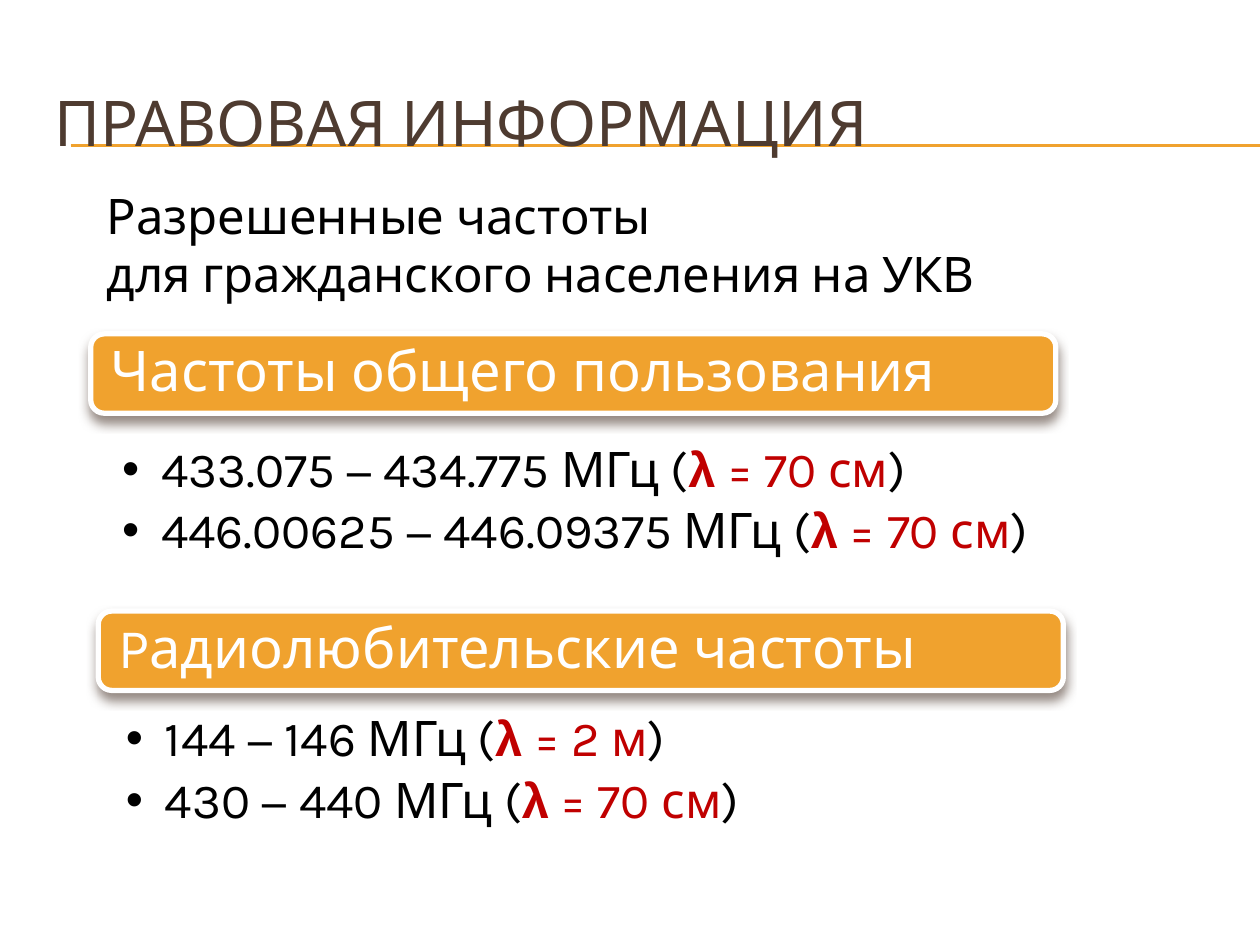
from lxml import etree
from pptx import Presentation
from pptx.dml.color import RGBColor
from pptx.enum.shapes import MSO_CONNECTOR, MSO_SHAPE
from pptx.enum.text import MSO_ANCHOR, MSO_AUTO_SIZE, PP_ALIGN
from pptx.oxml import parse_xml
from pptx.oxml.ns import nsdecls, qn
from pptx.util import Inches, Pt

STRAIGHT = MSO_CONNECTOR.STRAIGHT
ROUNDED = MSO_SHAPE.ROUNDED_RECTANGLE
TOP, MIDDLE = MSO_ANCHOR.TOP, MSO_ANCHOR.MIDDLE
NO_FIT = MSO_AUTO_SIZE.NONE
LEFT = PP_ALIGN.LEFT

FONT, SYMBOL_FONT = "Karla", "Arial"
ORANGE, BROWN, RED = "F0A22E", "4E3B30", "C00000"
WHITE, BLACK = "FFFFFF", "000000"


def color(value):
    return RGBColor.from_string(value)


def add_run(para, text, size, ink, font=FONT, bold=False):
    span = para.add_run()
    span.text = text
    span.font.size = Pt(size)
    span.font.name = font
    span.font.bold = bold
    span.font.color.rgb = color(ink)


def set_frame(frame, anchor=TOP, side=0.1, edge=0.05):
    frame.word_wrap = True
    frame.auto_size = NO_FIT
    frame.vertical_anchor = anchor
    frame.margin_left = frame.margin_right = Inches(side)
    frame.margin_top = frame.margin_bottom = Inches(edge)


def add_text_box(slide, left, top, width, height, **layout):
    box = slide.shapes.add_textbox(Inches(left), Inches(top), Inches(width), Inches(height))
    set_frame(box.text_frame, **layout)
    return box.text_frame


def add_title(slide, left, top, width, height):
    # Double rule behind the title
    for y in (1.15, 1.16):
        rule = slide.shapes.add_connector(
            STRAIGHT, Inches(0.56), Inches(y), Inches(10), Inches(y))
        rule.line.color.rgb = color(ORANGE)
        rule.line.width = Pt(0.75)
        etree.SubElement(rule._element.spPr, qn("a:effectLst"))

    title = slide.shapes.title
    title.left, title.top = Inches(left), Inches(top)
    title.width, title.height = Inches(width), Inches(height)
    set_frame(title.text_frame, anchor=MIDDLE)
    para = title.text_frame.paragraphs[0]
    para.alignment = LEFT
    add_run(para, "ПРАВОВАЯ ИНФОРМАЦИЯ", 36, BROWN)
    slide.shapes._spTree.append(title._element)


def add_intro(slide, left, top, width, height):
    para = add_text_box(slide, left, top, width, height).paragraphs[0]
    add_run(para, "Разрешенные частоты ", 28, BLACK)
    para.add_line_break()
    add_run(para, "для гражданского населения на УКВ", 28, BLACK)


def add_banner(slide, left, top, width, height, label):
    banner = slide.shapes.add_shape(
        ROUNDED, Inches(left), Inches(top), Inches(width), Inches(height))
    banner.adjustments[0] = 0.17
    banner.fill.solid()
    banner.fill.fore_color.rgb = color(ORANGE)
    banner.line.color.rgb = color(WHITE)
    banner.line.width = Pt(3)
    # Soft shadow straight below
    banner._element.spPr.append(parse_xml(
        f'<a:effectLst {nsdecls("a")}>'
        f'<a:outerShdw blurRad="{Pt(6)}" dist="{Pt(4)}" dir="5400000" rotWithShape="0">'
        f'<a:srgbClr val="{BROWN}"><a:alpha val="60000"/></a:srgbClr>'
        '</a:outerShdw></a:effectLst>'))

    frame = add_text_box(slide, left + 0.03, top + 0.03, width - 0.06, height - 0.06,
                         anchor=MIDDLE, side=0.13, edge=0.13)
    para = frame.paragraphs[0]
    para.line_spacing = 0.9
    add_run(para, label, 32, WHITE)


def add_bands(slide, left, top, width, height, bands):
    frame = add_text_box(slide, left, top, width, height, side=0.25, edge=0.04)
    frame.margin_right = Inches(0.22)
    for index, (band, wavelength) in enumerate(bands):
        para = frame.add_paragraph() if index else frame.paragraphs[0]
        para.line_spacing = 0.9
        para.space_after = Pt(5)
        props = para._p.get_or_add_pPr()
        props.set("marL", str(Inches(0.31)))
        props.set("indent", str(Inches(-0.31)))
        etree.SubElement(props, qn("a:buFont"), typeface=SYMBOL_FONT)
        etree.SubElement(props, qn("a:buChar"), char="•")
        add_run(para, f"{band} МГц (", 28, BLACK)
        add_run(para, "λ", 28, RED, SYMBOL_FONT, bold=True)
        add_run(para, f" = {wavelength}", 28, RED)
        add_run(para, ")", 28, BLACK)


def main():
    deck = Presentation()
    deck.slide_width, deck.slide_height = Inches(10), Inches(7.5)
    page = deck.slides.add_slide(deck.slide_layouts[5])

    add_title(page, 0.33, 0.5, 9.5, 0.92)
    add_intro(page, 0.75, 1.42, 7.4, 1.04)

    # Public bands
    add_banner(page, 0.72, 2.65, 7.66, 0.63, "Частоты общего пользования")
    add_bands(page, 0.72, 3.49, 7.96, 1.16, [
        ("433.075 − 434.775", "70 см"),
        ("446.00625 − 446.09375", "70 см"),
    ])

    # Amateur radio bands
    add_banner(page, 0.78, 4.85, 7.66, 0.63, "Pадиолюбительские частоты")
    add_bands(page, 0.75, 5.63, 7.73, 1.16, [
        ("144 − 146", "2 м"),
        ("430 − 440", "70 см"),
    ])

    deck.save("out.pptx")


if __name__ == "__main__":
    main()
